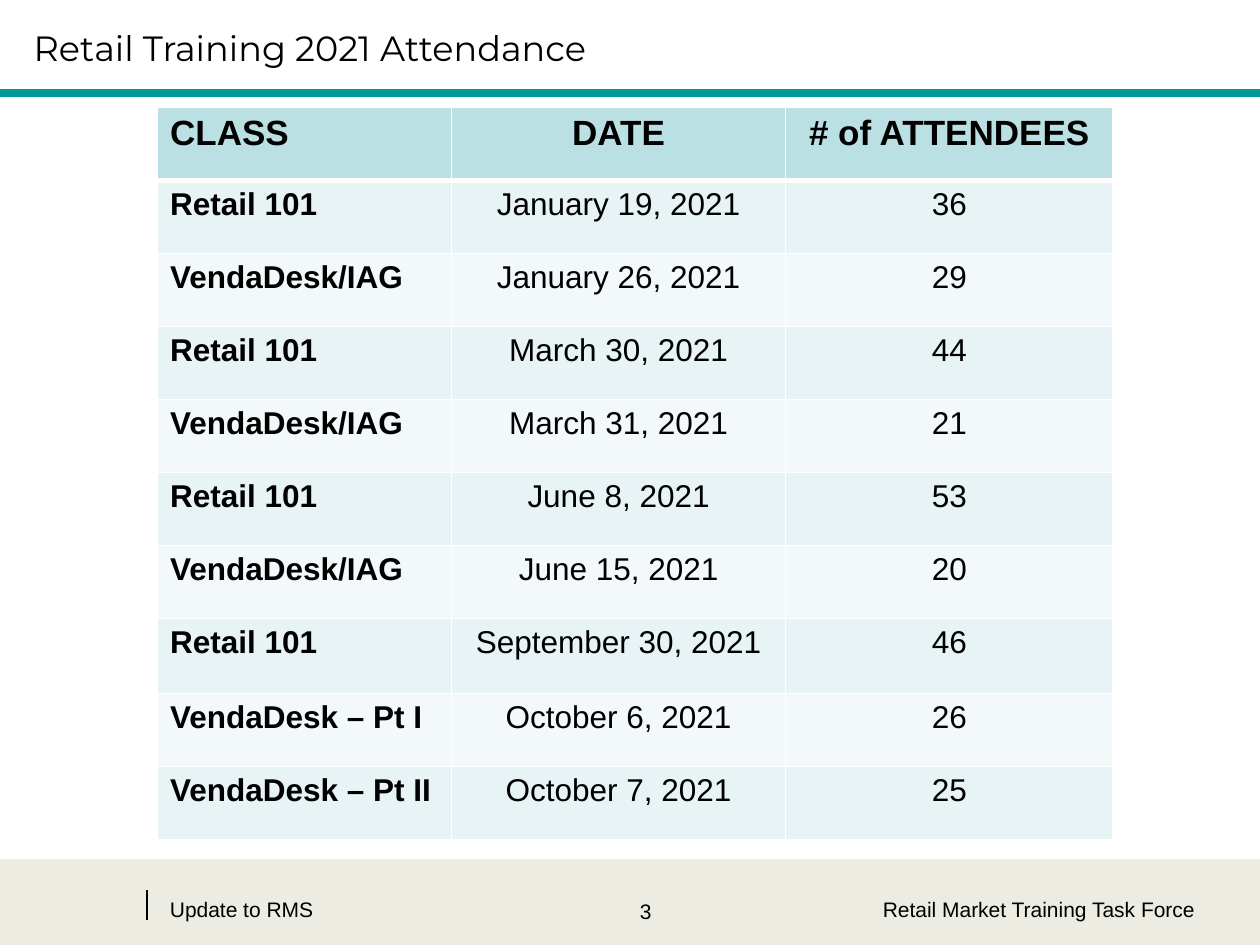
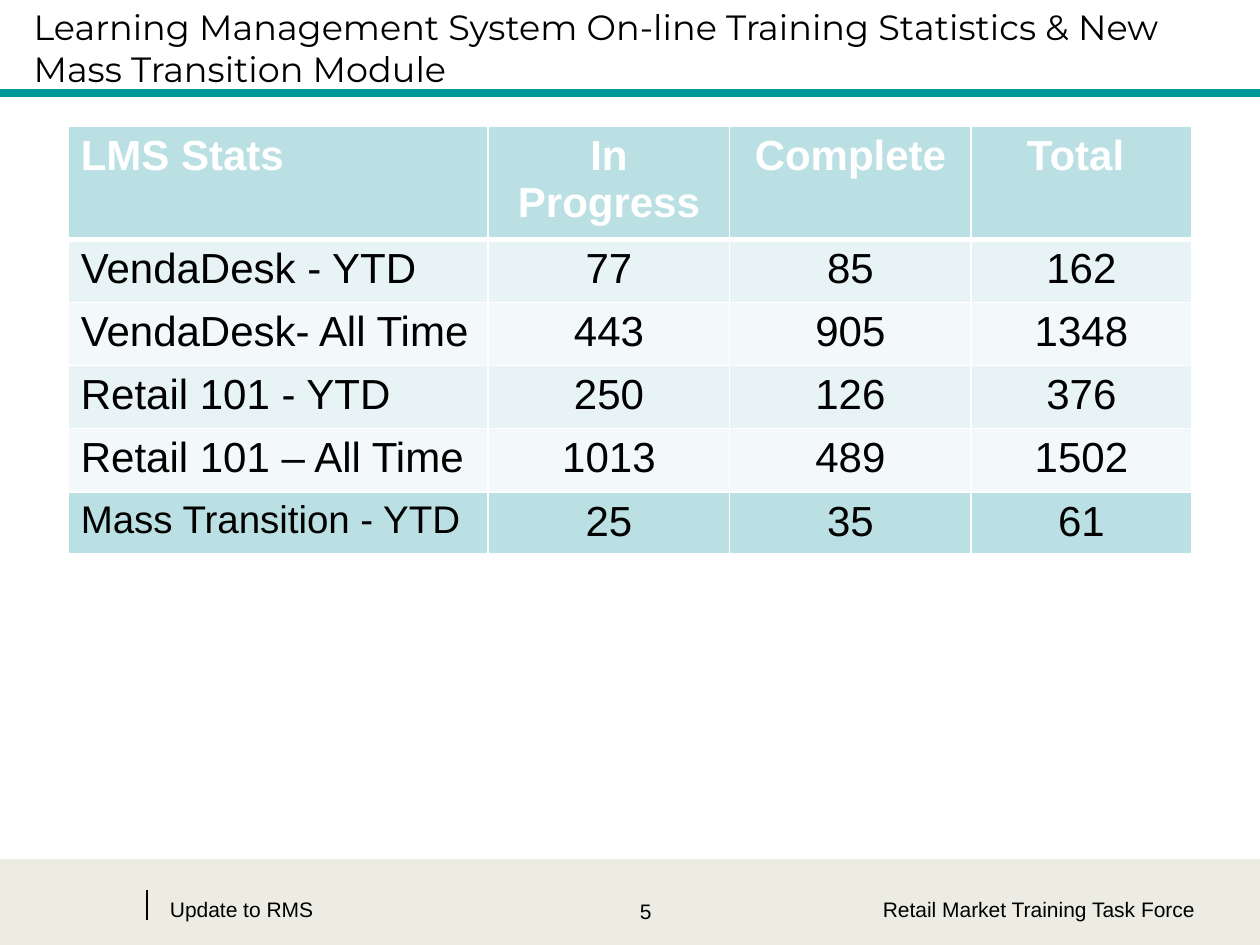
from lxml import etree
from pptx import Presentation
from pptx import util as u
from pptx.dml import color
from pptx.enum import shapes, text
from pptx.oxml import ns

Pt = u.Pt
COLORS = {
    "ink": "000000", "white": "FFFFFF", "teal": "009999", "sand": "ECECE2",
    "header": "BBE0E3", "odd_row": "E7F3F4", "even_row": "F3F9FA",
}
LEFT, CENTER, RIGHT = text.PP_ALIGN.LEFT, text.PP_ALIGN.CENTER, text.PP_ALIGN.RIGHT


def rgb(name):
    return color.RGBColor.from_string(COLORS[name])


class Deck:
    """Holds the shared style and the slide being built."""

    def __init__(self):
        self.prs = Presentation()
        self.prs.slide_width, self.prs.slide_height = Pt(720), Pt(540)
        self.slide = None

    def new_slide(self, heading, number):
        self.slide = self.prs.slides.add_slide(self.prs.slide_layouts[5])
        # Footer band and rules
        self.band(0, 491, 720, 49, "sand")
        self.rule(84, 508.5, 84, 525.5, "ink", 0.75)
        self.rule(0, 53.25, 720, 53.25, "teal", 4.5)
        # Title and footer texts
        self.title(heading)
        self.label(str(number), 270, 510, 198, CENTER)
        self.label("Retail Market Training Task Force", 492, 508.5, 198, RIGHT)
        self.label("Update to RMS", 90, 508.5, 168, LEFT)

    def put_text(self, frame, words, size, align=LEFT, font="Arial", ink="ink", bold=False):
        paragraph = frame.paragraphs[0]
        paragraph.alignment = align
        run = paragraph.add_run()
        run.text = words
        for key, value in {"name": font, "size": Pt(size), "bold": bold}.items():
            setattr(run.font, key, value)
        run.font.color.rgb = rgb(ink)

    def title(self, words):
        heading = self.slide.shapes.title
        place = {"left": 12, "top": 0, "width": 684, "height": 54}
        for key, value in place.items():
            setattr(heading, key, Pt(value))
        frame = heading.text_frame
        settings = {"auto_size": text.MSO_AUTO_SIZE.NONE, "word_wrap": True,
                    "vertical_anchor": text.MSO_ANCHOR.MIDDLE}
        for key, value in settings.items():
            setattr(frame, key, value)
        self.put_text(frame, words, 20, font="Montserrat")

    def label(self, words, left, top, width, align):
        box = self.slide.shapes.add_textbox(Pt(left), Pt(top), Pt(width), Pt(36))
        box.text_frame.word_wrap = True
        self.put_text(box.text_frame, words, 12, align)

    def band(self, left, top, width, height, fill):
        band = self.slide.shapes.add_shape(
            shapes.MSO_SHAPE.RECTANGLE, Pt(left), Pt(top), Pt(width), Pt(height))
        band.shadow.inherit = False
        band.fill.solid()
        band.fill.fore_color.rgb = rgb(fill)
        band.line.fill.background()

    def rule(self, x1, y1, x2, y2, ink, weight):
        rule = self.slide.shapes.add_connector(
            shapes.MSO_CONNECTOR.STRAIGHT, Pt(x1), Pt(y1), Pt(x2), Pt(y2))
        rule.line.color.rgb = rgb(ink)
        rule.line.width = Pt(weight)
        etree.SubElement(rule._element.spPr, ns.qn("a:effectLst"))

    def borders(self, cell, top, bottom):
        props = cell._tc.get_or_add_tcPr()
        weights = {"lnL": 1, "lnR": 1, "lnT": top, "lnB": bottom}
        for place, (side, weight) in enumerate(weights.items()):
            edge = etree.Element(ns.qn(f"a:{side}"), w=str(Pt(weight)))
            fill = etree.SubElement(edge, ns.qn("a:solidFill"))
            etree.SubElement(fill, ns.qn("a:srgbClr"), val=COLORS["white"])
            props.insert(place, edge)

    def table(self, left, top, widths, heights, rows, cell_style):
        """cell_style(row, column) gives the text format of one cell."""
        grid = self.slide.shapes.add_table(
            len(rows), len(widths), Pt(left), Pt(top),
            Pt(sum(widths)), Pt(sum(heights))).table
        grid.first_row = grid.horz_banding = False
        for column, width in zip(grid.columns, widths):
            column.width = Pt(width)
        for r, (values, height) in enumerate(zip(rows, heights)):
            grid.rows[r].height = Pt(height)
            fill = "header" if r == 0 else "odd_row" if r % 2 else "even_row"
            for c, value in enumerate(values):
                cell = grid.cell(r, c)
                cell.fill.solid()
                cell.fill.fore_color.rgb = rgb(fill)
                self.borders(cell, 3 if r == 1 else 1, 3 if r == 0 else 1)
                self.put_text(cell.text_frame, value, align=CENTER if c else LEFT,
                              **cell_style(r, c))


def main():
    deck = Deck()

    # Attendance by class
    deck.new_slide("Retail Training 2021 Attendance", 3)
    attendance = [
        ("CLASS", "DATE", "# of ATTENDEES"),
        ("Retail 101", "January 19, 2021", "36"),
        ("VendaDesk/IAG", "January 26, 2021", "29"),
        ("Retail 101", "March 30, 2021", "44"),
        ("VendaDesk/IAG", "March 31, 2021", "21"),
        ("Retail 101", "June 8, 2021", "53"),
        ("VendaDesk/IAG", "June 15, 2021", "20"),
        ("Retail 101", "September 30, 2021", "46"),
        ("VendaDesk – Pt I", "October 6, 2021", "26"),
        ("VendaDesk – Pt II", "October 7, 2021", "25"),
    ]
    deck.table(90, 61.5, [168, 191, 187], [41.7] * 7 + [43] + [41.7] * 2, attendance,
               lambda r, c: {"size": 18 if r else 20, "bold": r == 0 or c == 0})

    # Online training statistics
    deck.new_slide("Learning Management System On-line Training Statistics"
                   " & New Mass Transition Module", 5)
    lms_stats = [
        ("LMS Stats", "In Progress", "Complete", "Total "),
        ("VendaDesk - YTD", "77", "85", "162"),
        ("VendaDesk- All Time", "443", "905", "1348"),
        ("Retail 101 - YTD", "250", "126", "376"),
        ("Retail 101 – All Time", "1013", "489", "1502"),
    ]
    stat_widths = [240, 138, 138, 126]
    deck.table(39, 72, stat_widths, [60] + [34] * 4, lms_stats,
               lambda r, c: {"size": 24, "bold": r == 0, "ink": "ink" if r else "white"})

    # New module
    mass_transition = [("Mass Transition - YTD", "25", "35", "61")]
    deck.table(39, 281.5, stat_widths, [34], mass_transition,
               lambda r, c: {"size": 24 if c else 22})

    deck.prs.save("out.pptx")


if __name__ == "__main__":
    main()
